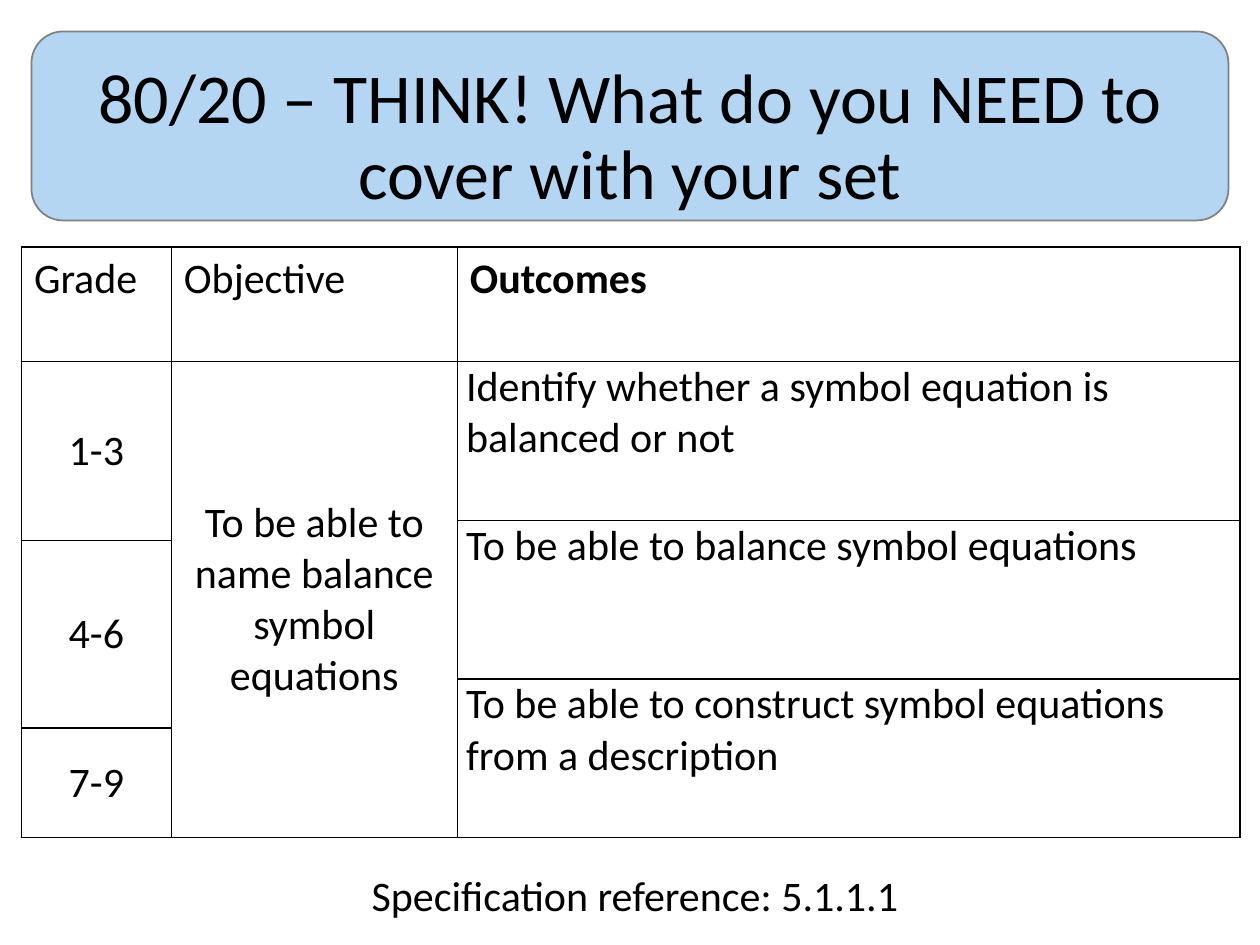
from pptx import Presentation
from pptx import util as u
from pptx.dml.color import RGBColor
from pptx.enum import shapes, text
from pptx.oxml.ns import qn
from lxml import etree

BLACK = RGBColor(0x00, 0x00, 0x00)
WHITE = RGBColor(0xFF, 0xFF, 0xFF)
GREY = RGBColor(0x80, 0x80, 0x80)
PALE_BLUE = RGBColor(0xB4, 0xD6, 0xF2)

PX = u.Inches(1) // 100  # 100 px to the inch
LEFT, CENTER = text.PP_ALIGN.LEFT, text.PP_ALIGN.CENTER
TOP, MIDDLE, BOTTOM = (text.MSO_ANCHOR.TOP, text.MSO_ANCHOR.MIDDLE,
                       text.MSO_ANCHOR.BOTTOM)

COLUMNS = [119, 227, 621]
ROWS = [91, 126, 16, 110, 39, 87]
HEADINGS = ["Grade", "Objective", "Outcomes"]
# first row, last row, wording
GRADES = [(1, 2, "1-3"), (3, 4, "4-6"), (5, 5, "7-9")]
OBJECTIVE = (1, 5, "To be able to name balance symbol equations")
OUTCOMES = [
    (1, 1, "Identify whether a symbol equation is balanced or not"),
    (2, 3, "To be able to balance symbol equations"),
    (4, 5, "To be able to construct symbol equations from a description"),
]


def px(*lengths):
    return [length * PX for length in lengths]


class Deck:
    font = "Calibri"
    body_size = 24

    def __init__(self, width, height):
        self.prs = Presentation()
        self.prs.slide_width, self.prs.slide_height = px(width, height)
        self.slide = self.prs.slides.add_slide(self.prs.slide_layouts[6])

    def set_text(self, frame, wording, align=LEFT, size=body_size, bold=False):
        """Fill a text frame with one styled paragraph and return it."""
        paragraph = frame.paragraphs[0]
        paragraph.text = wording
        paragraph.alignment = align
        font = paragraph.font
        font.name, font.size, font.bold = self.font, u.Pt(size), bold
        font.color.rgb = BLACK
        return paragraph

    def panel(self, left, top, width, height):
        panel = self.slide.shapes.add_shape(
            shapes.MSO_SHAPE.ROUNDED_RECTANGLE, *px(left, top, width, height))
        panel.shadow.inherit = False
        panel.fill.solid()
        panel.fill.fore_color.rgb = PALE_BLUE
        panel.line.color.rgb = GREY
        panel.line.width = u.Pt(1)

    def label(self, left, top, width, height, wording, size=body_size,
              anchor=TOP, spacing=1.0):
        frame = self.slide.shapes.add_textbox(
            *px(left, top, width, height)).text_frame
        frame.word_wrap = True
        frame.vertical_anchor = anchor
        self.set_text(frame, wording, CENTER, size).line_spacing = spacing

    def table(self, left, top, columns, rows):
        """Add a plain white table with black borders."""
        table = self.slide.shapes.add_table(
            len(rows), len(columns),
            *px(left, top, sum(columns), sum(rows))).table
        for column, width in zip(table.columns, columns):
            column.width = width * PX
        for row, height in zip(table.rows, rows):
            row.height = height * PX
        for cell in table.iter_cells():
            self.border(cell)
            cell.fill.solid()
            cell.fill.fore_color.rgb = WHITE
        return table

    def border(self, cell):
        properties = cell._tc.get_or_add_tcPr()
        for side in ("lnL", "lnR", "lnT", "lnB"):
            line = etree.SubElement(properties, qn(f"a:{side}"),
                                    w=str(u.Pt(1)))
            fill = etree.SubElement(line, qn("a:solidFill"))
            etree.SubElement(fill, qn("a:srgbClr"), val=str(BLACK))

    def cell(self, table, column, first, last, wording, align=LEFT,
             anchor=TOP, margins=(10, 5), bold=False):
        """Fill a cell that reaches from the first row to the last."""
        cell = table.cell(first, column)
        if last > first:
            cell.merge(table.cell(last, column))
        cell.margin_left = cell.margin_right = margins[0] * PX
        cell.margin_top = cell.margin_bottom = margins[1] * PX
        cell.vertical_anchor = anchor
        self.set_text(cell.text_frame, wording, align, bold=bold)


def main():
    deck = Deck(1000, 750)
    deck.panel(25, 25, 950, 150)
    deck.label(25, 14, 950, 161,
               "80/20 – THINK! What do you NEED to cover with your set",
               size=40, anchor=BOTTOM, spacing=0.9)
    deck.label(25, 685, 958, 50, "Specification reference: 5.1.1.1")

    table = deck.table(17, 196, COLUMNS, ROWS)
    for column, heading in enumerate(HEADINGS):
        deck.cell(table, column, 0, 0, heading, bold=heading == "Outcomes")
    for grade in GRADES:
        deck.cell(table, 0, *grade, align=CENTER, anchor=MIDDLE)
    deck.cell(table, 1, *OBJECTIVE, align=CENTER, anchor=MIDDLE)
    for outcome in OUTCOMES:
        deck.cell(table, 2, *outcome, margins=(7, 0))

    deck.prs.save("out.pptx")


if __name__ == "__main__":
    main()
